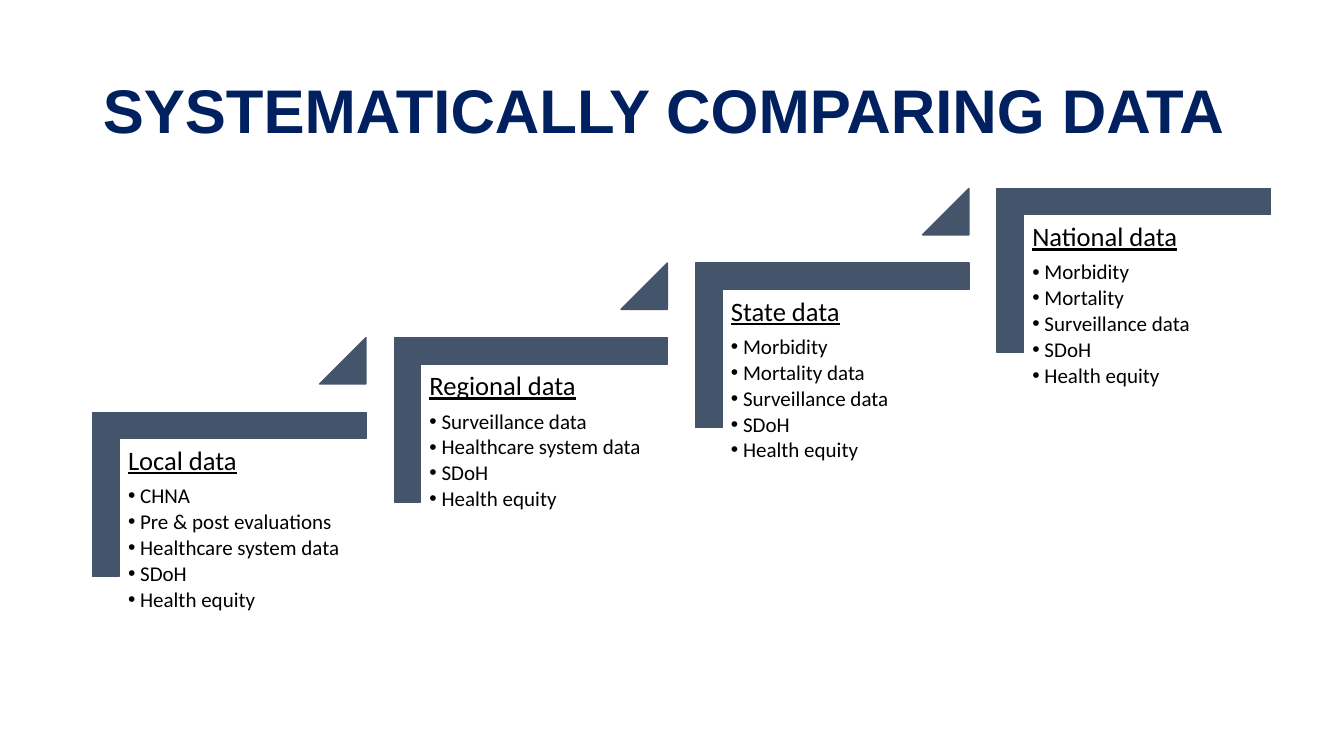
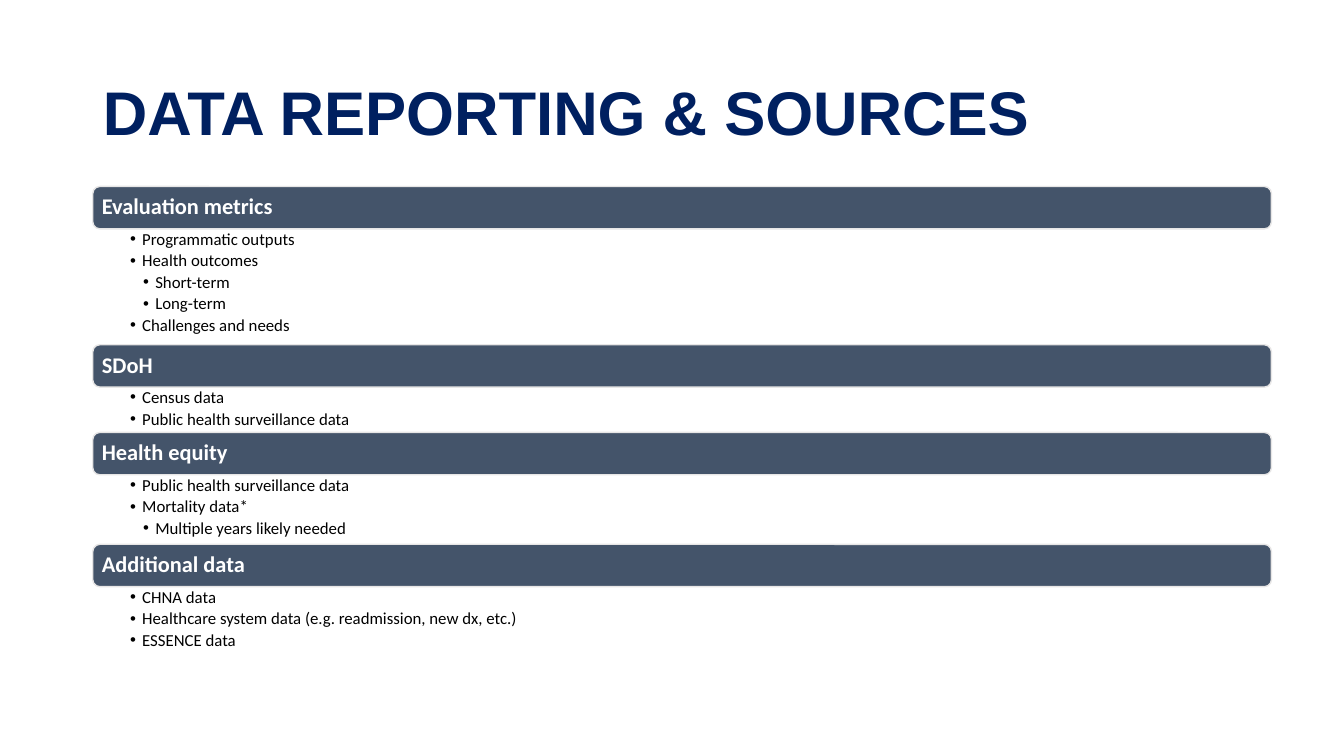
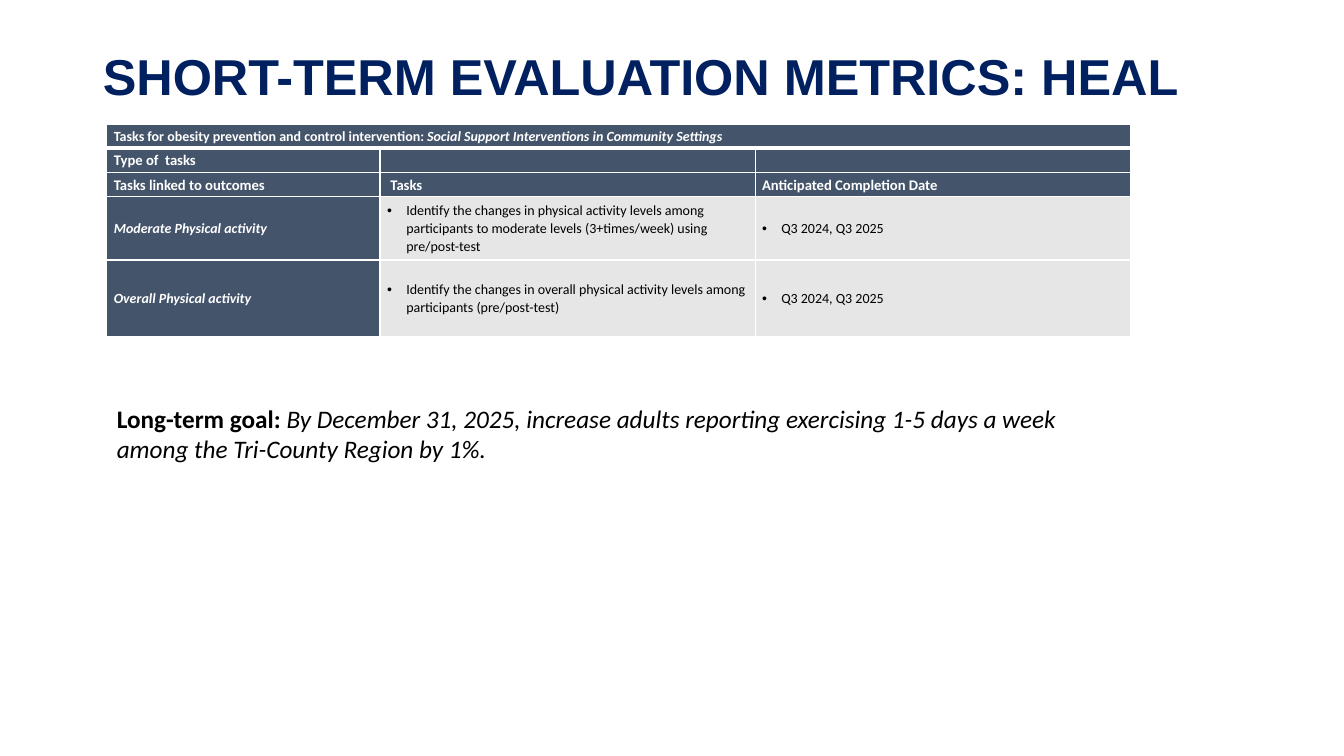
from dataclasses import dataclass

from lxml import etree
from pptx import Presentation
from pptx.dml.color import RGBColor
from pptx.enum.shapes import MSO_SHAPE
from pptx.enum.text import MSO_ANCHOR, MSO_AUTO_SIZE, PP_ALIGN
from pptx.oxml.ns import qn
from pptx.util import Inches, Pt

CORNER = MSO_SHAPE.CORNER
TRIANGLE = MSO_SHAPE.ISOSCELES_TRIANGLE
ROUNDED = MSO_SHAPE.ROUNDED_RECTANGLE
TOP, MIDDLE = MSO_ANCHOR.TOP, MSO_ANCHOR.MIDDLE
LEFT = PP_ALIGN.LEFT
NO_AUTOFIT = MSO_AUTO_SIZE.NONE
TITLE_ONLY = 5


@dataclass(frozen=True)
class Theme:
    navy: str = "002060"
    slate: str = "44546A"
    pale: str = "E7E6E6"
    white: str = "FFFFFF"
    black: str = "000000"
    title_font: str = "Arial"
    body_font: str = "Calibri"
    title_size: float = 44
    long_title_size: float = 36
    step_heading: float = 19
    step_bullet: float = 15
    band_heading: float = 16
    band_bullet: float = 12
    table_heading: float = 10.5
    table_body: float = 10
    goal: float = 18
    tight: float = 0.9
    table_spacing: float = 1.07


THEME = Theme()

STEPS = [
    ("Local data", ["CHNA", "Pre & post evaluations", "Healthcare system data",
                    "SDoH", "Health equity"]),
    ("Regional data", ["Surveillance data", "Healthcare system data",
                       "SDoH", "Health equity"]),
    ("State data", ["Morbidity", "Mortality data", "Surveillance data",
                    "SDoH", "Health equity"]),
    ("National data", ["Morbidity", "Mortality", "Surveillance data",
                       "SDoH", "Health equity"]),
]

# Heading, height of the list below it, and (level, text) entries
BANDS = [
    ("Evaluation metrics", 1.15, [
        (1, "Programmatic outputs"), (1, "Health outcomes"),
        (2, "Short-term"), (2, "Long-term"), (1, "Challenges and needs")]),
    ("SDoH", 0.45, [(1, "Census data"), (1, "Public health surveillance data")]),
    ("Health equity", 0.69, [
        (1, "Public health surveillance data"), (1, "Mortality data*"),
        (2, "Multiple years likely needed")]),
    ("Additional data", 0.69, [
        (1, "CHNA data"),
        (1, "Healthcare system data (e.g. readmission, new dx, etc.)"),
        (1, "ESSENCE data")]),
]

TABLE_CAPTION = ("Tasks for obesity prevention and control intervention: ",
                 "Social Support Interventions in Community Settings")
TABLE_HEADINGS = [
    ["Type of  tasks", "", ""],
    ["Tasks linked to outcomes", " Tasks", "Anticipated Completion Date"],
]
TABLE_TASKS = [
    ["Moderate Physical activity",
     "Identify the changes in physical activity levels among participants "
     "to moderate levels (3+times/week) using pre/post-test",
     "Q3 2024, Q3 2025"],
    ["Overall Physical activity",
     "Identify the changes in overall physical activity levels among "
     "participants (pre/post-test)",
     "Q3 2024, Q3 2025"],
]


def rgb(color):
    return RGBColor.from_string(color)


def add_run(para, text, size, color=THEME.black, font=THEME.body_font,
            bold=False, italic=False, underline=False):
    run = para.add_run()
    run.text = text
    run.font.name = font
    run.font.size = Pt(size)
    run.font.color.rgb = rgb(color)
    run.font.bold = bold
    run.font.italic = italic
    run.font.underline = underline


def next_para(frame):
    """Return the first paragraph while it is unused, then new ones."""
    first = frame.paragraphs[0]
    return frame.add_paragraph() if first.runs else first


def space_para(para, line_spacing, after=0):
    para.alignment = LEFT
    para.line_spacing = line_spacing
    para.space_after = Pt(after)


def set_bullet(para, margin, hanging):
    properties = para._p.get_or_add_pPr()
    properties.set("marL", str(Inches(margin)))
    properties.set("indent", str(-Inches(hanging)))
    etree.SubElement(properties, qn("a:buFont"), typeface="Arial")
    etree.SubElement(properties, qn("a:buChar"), char="•")


def add_list_item(frame, text, size, gap_ratio, level=1):
    para = next_para(frame)
    para.level = level
    space_para(para, THEME.tight, size * gap_ratio)
    set_bullet(para, 0.12 if level == 1 else 0.25, 0.12)
    add_run(para, text, size)


def set_frame(frame, insets, anchor=TOP):
    frame.word_wrap = True
    frame.auto_size = NO_AUTOFIT
    frame.vertical_anchor = anchor
    (frame.margin_left, frame.margin_top,
     frame.margin_right, frame.margin_bottom) = map(Inches, insets)


def add_box(slide, place, insets):
    frame = slide.shapes.add_textbox(*map(Inches, place)).text_frame
    set_frame(frame, insets)
    return frame


def add_slate_shape(slide, preset, place, line=THEME.slate):
    shape = slide.shapes.add_shape(preset, *map(Inches, place))
    shape.shadow.inherit = False
    shape.fill.solid()
    shape.fill.fore_color.rgb = rgb(THEME.slate)
    shape.line.color.rgb = rgb(line)
    shape.line.width = Pt(1)
    return shape


def add_titled_slide(deck, text, top, size=THEME.title_size):
    slide = deck.slides.add_slide(deck.slide_layouts[TITLE_ONLY])
    title = slide.shapes.title
    title.left, title.top, title.width, title.height = map(
        Inches, (0.92, top, 11.5, 1.45))
    set_frame(title.text_frame, (0.1, 0.05, 0.1, 0.05), MIDDLE)
    para = title.text_frame.paragraphs[0]
    space_para(para, THEME.tight)
    add_run(para, text, size, THEME.navy, THEME.title_font, bold=True)
    return slide


def add_step(slide, left, top, heading, items):
    width, height = 2.71, 1.63
    # The corner is turned a quarter, so its own box is tall and centred here
    shift = (width - height) / 2
    corner = add_slate_shape(slide, CORNER,
                             (left + shift, top - shift, height, width))
    corner.rotation = 90
    corner.adjustments[0] = corner.adjustments[1] = 0.16

    frame = add_box(slide, (left + 0.27, top + 0.27, 2.44, 2.14), [0.08] * 4)
    para = next_para(frame)
    space_para(para, THEME.tight, THEME.step_heading * 0.35)
    add_run(para, heading, THEME.step_heading, underline=True)
    for item in items:
        add_list_item(frame, item, THEME.step_bullet, 0.15)


def build_comparison(deck):
    slide = add_titled_slide(deck, "SYSTEMATICALLY COMPARING DATA", 0.4)
    across, rise = 2.99, 0.74
    for index, (heading, items) in enumerate(STEPS):
        left, top = 0.92 + index * across, 4.09 - index * rise
        add_step(slide, left, top, heading, items)
        if index < len(STEPS) - 1:
            triangle = add_slate_shape(slide, TRIANGLE,
                                       (left + 2.25, top - rise, 0.46, 0.46))
            triangle.adjustments[0] = 1


def build_sources(deck):
    slide = add_titled_slide(deck, "DATA REPORTING & SOURCES", 0.42)
    left, top, width, band_height = 0.92, 1.85, 11.69, 0.42
    for heading, list_height, items in BANDS:
        band = add_slate_shape(slide, ROUNDED, (left, top, width, band_height),
                               THEME.pale)
        set_frame(band.text_frame, [0.07] * 4, MIDDLE)
        para = next_para(band.text_frame)
        space_para(para, THEME.tight)
        add_run(para, heading, THEME.band_heading, THEME.white, bold=True)

        top += band_height
        frame = add_box(slide, (left, top, width, list_height),
                        (0.37, 0.02, 0.12, 0.02))
        for level, item in items:
            add_list_item(frame, item, THEME.band_bullet, 0.2, level)
        top += list_height


def set_border(cell, side, width):
    line = etree.SubElement(cell._tc.get_or_add_tcPr(), qn(f"a:ln{side}"),
                            w=str(Pt(width)))
    fill = etree.SubElement(line, qn("a:solidFill"))
    etree.SubElement(fill, qn("a:srgbClr"), val=THEME.white)


def format_cell(cell, fill, top_line=1, bottom_line=1):
    """Style a cell and return its paragraph."""
    for side, width in (("L", 1), ("R", 1), ("T", top_line), ("B", bottom_line)):
        set_border(cell, side, width)
    cell.fill.solid()
    cell.fill.fore_color.rgb = rgb(fill)
    cell.vertical_anchor = MIDDLE
    cell.margin_left = cell.margin_right = Inches(0.07)
    cell.margin_top = cell.margin_bottom = 0
    para = cell.text_frame.paragraphs[0]
    space_para(para, THEME.table_spacing)
    return para


def add_task_table(slide):
    widths = [2.71, 3.72, 3.72]
    heights = [0.24, 0.24, 0.24, 0.63, 0.76]
    table = slide.shapes.add_table(
        len(heights), len(widths), Inches(1.06), Inches(1.23),
        Inches(sum(widths)), Inches(sum(heights))).table
    table.horz_banding = False
    for column, width in zip(table.columns, widths):
        column.width = Inches(width)
    for row, height in zip(table.rows, heights):
        row.height = Inches(height)

    paras = [format_cell(cell, THEME.slate, bottom_line=3)
             for cell in table.rows[0].cells]
    table.cell(0, 0).merge(table.cell(0, len(widths) - 1))
    for text, italic in zip(TABLE_CAPTION, (False, True)):
        add_run(paras[0], text, THEME.table_body, THEME.white,
                bold=True, italic=italic)

    for row, texts in enumerate(TABLE_HEADINGS, start=1):
        for column, text in enumerate(texts):
            para = format_cell(table.cell(row, column), THEME.slate,
                               top_line=3 if row == 1 else 1)
            if text:
                add_run(para, text, THEME.table_heading, THEME.white, bold=True)
            else:
                # An empty cell needs a small size to keep the row low
                etree.SubElement(para._p, qn("a:endParaRPr"),
                                 sz=str(int(THEME.table_heading * 100)))

    for row, (outcome, *details) in enumerate(TABLE_TASKS, start=3):
        para = format_cell(table.cell(row, 0), THEME.slate)
        add_run(para, outcome, THEME.table_body, THEME.white,
                bold=True, italic=True)
        for column, text in enumerate(details, start=1):
            para = format_cell(table.cell(row, column), THEME.pale)
            set_bullet(para, 0.19, 0.19)
            add_run(para, text, THEME.table_body)


def build_metrics(deck):
    slide = add_titled_slide(deck, "SHORT-TERM EVALUATION METRICS: HEAL", 0.06,
                             THEME.long_title_size)
    add_task_table(slide)
    frame = add_box(slide, (1.06, 3.95, 10.28, 0.71), (0.1, 0.05, 0.1, 0.05))
    para = next_para(frame)
    add_run(para, "Long-term goal: ", THEME.goal, bold=True)
    add_run(para, "By December 31, 2025, increase adults reporting exercising "
            "1-5 days a week among the Tri-County Region by 1%.",
            THEME.goal, italic=True)


def main():
    deck = Presentation()
    deck.slide_width, deck.slide_height = Inches(13.33), Inches(7.5)
    build_comparison(deck)
    build_sources(deck)
    build_metrics(deck)
    deck.save("out.pptx")


if __name__ == "__main__":
    main()
